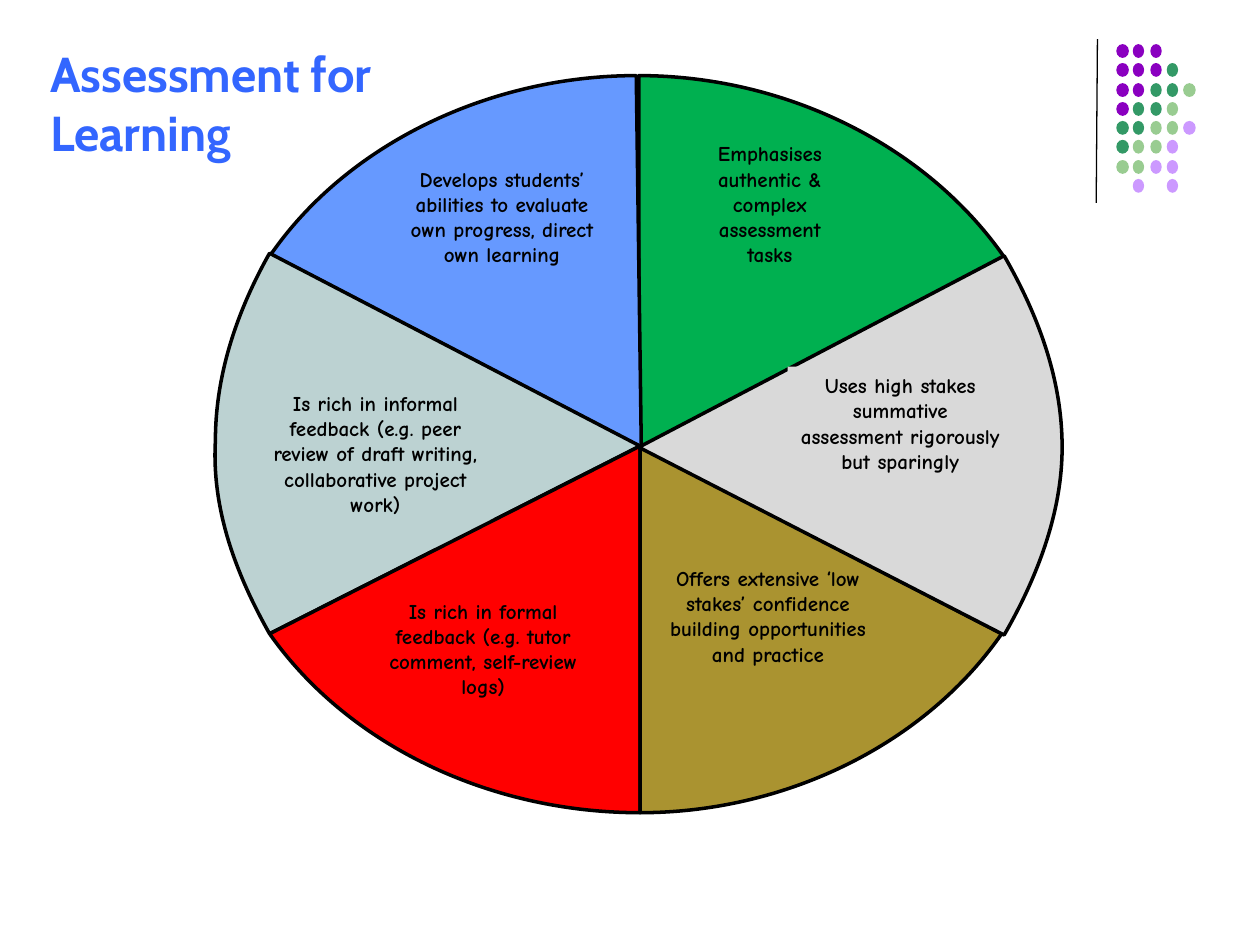
from dataclasses import dataclass
from typing import NamedTuple

from lxml.etree import SubElement
from pptx import Presentation
from pptx.dml.color import RGBColor
from pptx.enum.shapes import MSO_CONNECTOR, MSO_SHAPE
from pptx.enum.text import MSO_ANCHOR, PP_ALIGN
from pptx.oxml.ns import qn
from pptx.util import Emu, Pt

PX = 9144  # EMU per px, 100 px to the inch


@dataclass(frozen=True)
class Theme:
    title_font: str = "Cabin"
    label_font: str = "Comic Neue"
    title_size: int = 28
    label_size: int = 12
    outline: float = 2
    rule: float = 0.75
    title: str = "3366FF"
    ink: str = "000000"
    green: str = "00B050"
    blue: str = "6699FF"
    teal: str = "BCD2D2"
    red: str = "FF0000"
    olive: str = "AA9330"
    grey: str = "D9D9D9"
    dots: tuple[tuple[str, str], ...] = (
        ("P", "8A00C0"), ("G", "339966"), ("L", "99CC91"), ("V", "CC99FF"))


THEME = Theme()


class Point(NamedTuple):
    x: int
    y: int


class Box(NamedTuple):
    x: int
    y: int
    w: int
    h: int

    def emu(self) -> list[Emu]:
        return [Emu(v * PX) for v in self]


@dataclass(frozen=True)
class Wedge:
    text: str
    color: str
    label: Box
    filled_label: bool
    hub: Point
    rim: tuple[Point, ...]  # start, then two controls and an end per curve
    margin: int = 10


def rim(*coords: int) -> tuple[Point, ...]:
    return tuple(Point(*xy) for xy in zip(coords[::2], coords[1::2]))


WEDGES = (
    Wedge("Emphasises authentic & complex assessment tasks", THEME.green,
          Box(544, 107, 134, 110), True, Point(507, 358),
          rim(797, 204, 735, 115, 623, 60, 507, 60)),
    Wedge("Develops students’ abilities to evaluate own progress, direct own learning",
          THEME.blue, Box(310, 127, 177, 110), False, Point(509, 355),
          rim(505, 60, 389, 60, 276, 114, 215, 202)),
    Wedge("Is rich in informal feedback (e.g. peer review of draft writing, "
          "collaborative project work)", THEME.teal,
          Box(204, 305, 188, 130), True, Point(508, 354),
          rim(214, 201, 187, 249, 171, 299, 171, 350, 168, 404, 187, 455, 214, 503)),
    Wedge("Is rich in formal feedback (e.g. tutor comment, self-review logs)",
          THEME.red, Box(280, 470, 207, 90), False, Point(508, 354),
          rim(214, 503, 276, 591, 388, 645, 508, 645), margin=20),
    Wedge("Offers extensive ‘low stakes’ confidence building opportunities and practice",
          THEME.olive, Box(519, 444, 181, 110), False, Point(508, 354),
          rim(508, 645, 623, 645, 734, 591, 795, 503)),
    Wedge("Uses high stakes summative assessment rigorously but sparingly",
          THEME.grey, Box(625, 291, 179, 110), True, Point(507, 355),
          rim(797, 504, 824, 457, 843, 406, 843, 355, 843, 301, 824, 250, 797, 203)),
)

DOT_ROWS = ("PPP", "PPPG", "PPGGL", "PGGL", "GGLLV", "GLLV", "LLVV", " V V")
DOT_WIDTHS = (10, 9, 9, 9, 10)


def rgb(color: str) -> RGBColor:
    return RGBColor.from_string(color)


def paint(shape, fill: str, line: str | None = None) -> None:
    shape.shadow.inherit = False
    shape.fill.solid()
    shape.fill.fore_color.rgb = rgb(fill)
    if line:
        shape.line.color.rgb = rgb(line)
        shape.line.width = Pt(THEME.outline)
    else:
        shape.line.fill.background()


def write(shape, text: str, font: str, size: int, color: str, align: PP_ALIGN,
          margin: int = 10) -> None:
    tf = shape.text_frame
    frame = {"word_wrap": True, "vertical_anchor": MSO_ANCHOR.TOP,
             "margin_left": Emu(margin * PX), "margin_right": Emu(margin * PX)}
    for name, value in frame.items():
        setattr(tf, name, value)
    p = tf.paragraphs[0]
    p.alignment = align
    r = p.add_run()
    r.text = text
    for name, value in {"name": font, "size": Pt(size), "bold": True}.items():
        setattr(r.font, name, value)
    r.font.color.rgb = rgb(color)


def bend(shape, controls: list[tuple[Point, Point]]) -> None:
    """Turn the first straight segments of a freeform into cubic curves."""
    segments = list(shape._element.iter(qn("a:lnTo")))
    for segment, pair in zip(segments, controls):
        segment.tag = qn("a:cubicBezTo")
        for i, control in enumerate(pair):
            pt = SubElement(segment, qn("a:pt"))
            pt.set("x", str(control.x * PX - shape.left))
            pt.set("y", str(control.y * PX - shape.top))
            segment.insert(i, pt)


def draw_wedge(s, wedge: Wedge) -> None:
    group = s.shapes.add_group_shape()
    start, *ends = [(p.x * PX, p.y * PX) for p in wedge.rim[::3]]
    outline = group.shapes.build_freeform(*start, scale=1.0)
    outline.add_line_segments([*ends, (wedge.hub.x * PX, wedge.hub.y * PX)], close=True)
    slice_ = outline.convert_to_shape()
    bend(slice_, list(zip(wedge.rim[1::3], wedge.rim[2::3])))
    paint(slice_, wedge.color, THEME.ink)

    if wedge.filled_label:
        sp = group.shapes.add_shape(MSO_SHAPE.RECTANGLE, *wedge.label.emu())
        paint(sp, wedge.color)
    else:
        sp = group.shapes.add_textbox(*wedge.label.emu())
    write(sp, wedge.text, THEME.label_font, THEME.label_size, THEME.ink,
          PP_ALIGN.CENTER, wedge.margin)


def draw_dots(s) -> None:
    group = s.shapes.add_group_shape()
    colors = dict(THEME.dots)
    for row, codes in enumerate(DOT_ROWS):
        for col, code in enumerate(codes):
            if code in colors:
                box = Box(886 + round(13.3 * col), 35 + round(15.3 * row),
                          DOT_WIDTHS[col], 11)
                paint(group.shapes.add_shape(MSO_SHAPE.OVAL, *box.emu()), colors[code])


def draw_rule(s, start: Point, end: Point) -> None:
    rule = s.shapes.add_connector(
        MSO_CONNECTOR.STRAIGHT, *[Emu(v * PX) for v in (*start, *end)])
    rule.line.color.rgb = rgb(THEME.ink)
    rule.line.width = Pt(THEME.rule)
    SubElement(rule._element.spPr, qn("a:effectLst"))


def main() -> None:
    prs = Presentation()
    prs.slide_width, prs.slide_height = Emu(1000 * PX), Emu(750 * PX)
    s = prs.slides.add_slide(prs.slide_layouts[6])

    # Corner decoration
    draw_rule(s, Point(871, 31), Point(870, 161))
    draw_dots(s)

    # Wheel
    for wedge in WEDGES:
        draw_wedge(s, wedge)

    # Title
    title = s.shapes.add_textbox(*Box(30, 30, 364, 103).emu())
    write(title, "Assessment for Learning", THEME.title_font, THEME.title_size,
          THEME.title, PP_ALIGN.LEFT)

    prs.save("out.pptx")


if __name__ == "__main__":
    main()
